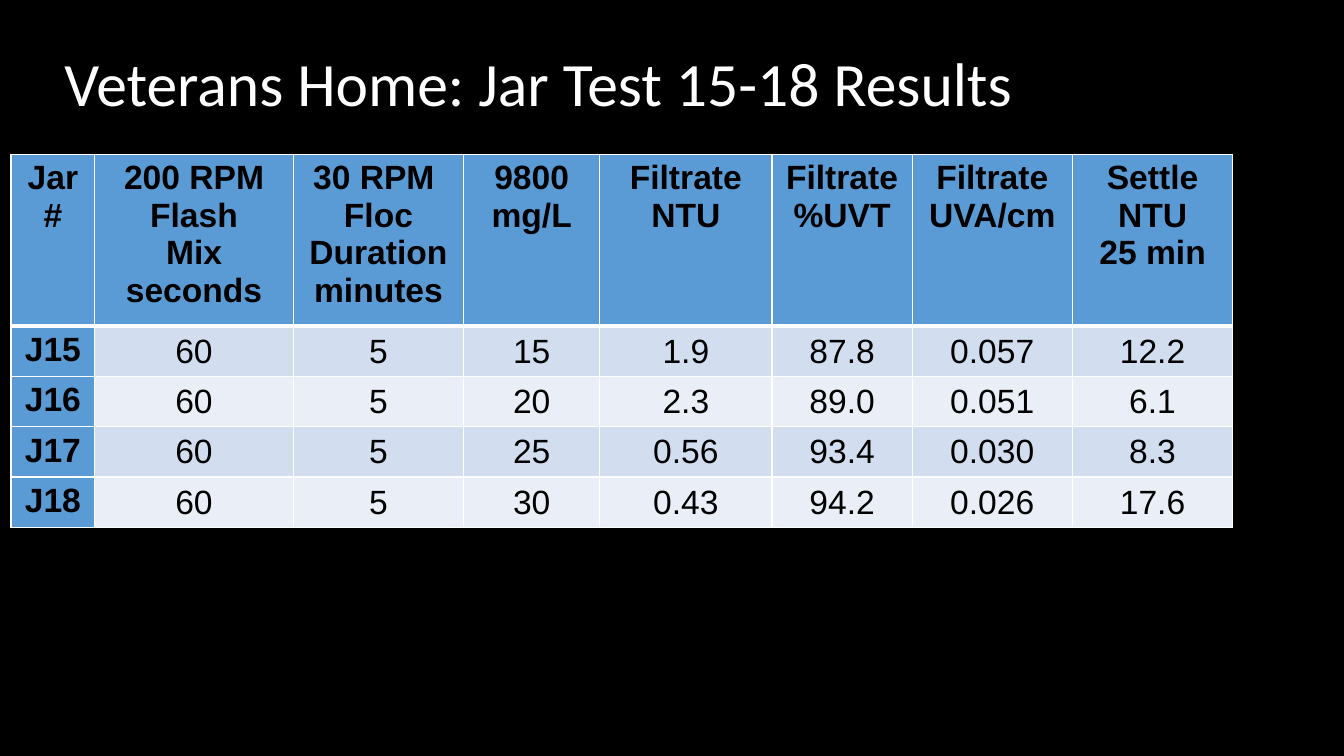
import pptx
import pptx.dml.color
import pptx.enum.text
import pptx.oxml
import pptx.oxml.ns
import pptx.util

Pt = pptx.util.Pt
RGBColor = pptx.dml.color.RGBColor
ANCHOR = pptx.enum.text.MSO_ANCHOR
ALIGN = pptx.enum.text.PP_ALIGN

BLACK = RGBColor(0x00, 0x00, 0x00)
WHITE = RGBColor(0xFF, 0xFF, 0xFF)
HEADER_BLUE = RGBColor(0x5B, 0x9B, 0xD5)
BAND_DARK = RGBColor(0xD2, 0xDE, 0xEF)
BAND_LIGHT = RGBColor(0xEA, 0xEF, 0xF7)

HEADERS = ["Jar\n#", "200 RPM\nFlash\nMix\nseconds", "30 RPM \nFloc\nDuration\nminutes",
           "9800\nmg/L", "Filtrate\nNTU", "Filtrate\n%UVT", "Filtrate\nUVA/cm",
           "Settle\nNTU\n25 min"]
RESULTS = [
    ["J15", "60", "5", "15", "1.9", "87.8", "0.057", "12.2"],
    ["J16", "60", "5", "20", "2.3", "89.0", "0.051", "6.1"],
    ["J17", "60", "5", "25", "0.56", "93.4", "0.030", "8.3"],
    ["J18", "60", "5", "30", "0.43", "94.2", "0.026", "17.6"],
]
COL_WIDTHS = [59.8, 141.8, 121.7, 97.2, 123.1, 100.1, 114.5, 114.5]
ROW_HEIGHTS = [39.6] + [29.5] * len(RESULTS)


class SlideBuilder:
    title_font = {"name": "Calibri", "size": Pt(44), "bold": False}
    cell_font = {"name": "Arial", "size": Pt(24)}
    value_format = {"vertical_anchor": ANCHOR.MIDDLE, "margin_left": Pt(0.72),
                    "margin_right": Pt(0.72), "margin_top": Pt(0.72), "margin_bottom": Pt(0)}

    def __init__(self, prs):
        self.s = prs.slides.add_slide(prs.slide_layouts[6])

    def background(self, color):
        fill = self.s.background.fill
        fill.solid()
        fill.fore_color.rgb = color

    def apply(self, target, values):
        for name, value in values.items():
            setattr(target, name, value)

    def add_text(self, tf, text, font, color, para):
        for i, line in enumerate(text.split("\n")):
            p = tf.add_paragraph() if i else tf.paragraphs[0]
            self.apply(p, para)
            r = p.add_run()
            r.text = line
            self.apply(r.font, font)
            r.font.color.rgb = color

    def title(self, text, x, y, w, h):
        tf = self.s.shapes.add_textbox(Pt(x), Pt(y), Pt(w), Pt(h)).text_frame
        self.apply(tf, {"word_wrap": True, "vertical_anchor": ANCHOR.MIDDLE})
        self.add_text(tf, text, self.title_font, WHITE, {"line_spacing": 0.9})

    def borders(self, cell, widths):
        tc_pr = cell._tc.get_or_add_tcPr()
        for side, width in widths.items():
            tc_pr.append(pptx.oxml.parse_xml(
                f'<a:ln{side} {pptx.oxml.ns.nsdecls("a")} w="{Pt(width)}">'
                f'<a:solidFill><a:srgbClr val="{WHITE}"/></a:solidFill></a:ln{side}>'))

    def cell(self, cell, text, row, col):
        is_label = row == 0 or col == 0
        # Thick rule between the header and the first result row
        self.borders(cell, {"L": 1, "R": 1, "T": 3 if row == 1 else 1,
                            "B": 3 if row == 0 else 1})
        cell.fill.solid()
        band = BAND_DARK if row % 2 else BAND_LIGHT
        cell.fill.fore_color.rgb = HEADER_BLUE if is_label else band
        if not is_label:
            self.apply(cell, self.value_format)
        font = {**self.cell_font, "bold": is_label}
        self.add_text(cell.text_frame, text, font, BLACK, {"alignment": ALIGN.CENTER})

    def table(self, rows, x, y, widths, heights):
        table = self.s.shapes.add_table(len(rows), len(widths), Pt(x), Pt(y),
                                        Pt(sum(widths)), Pt(sum(heights))).table
        for column, width in zip(table.columns, widths):
            column.width = Pt(width)
        for table_row, height in zip(table.rows, heights):
            table_row.height = Pt(height)
        for i, row in enumerate(rows):
            for j, text in enumerate(row):
                self.cell(table.cell(i, j), text, i, j)


def main():
    prs = pptx.Presentation()
    prs.slide_width, prs.slide_height = Pt(960), Pt(540)
    slide = SlideBuilder(prs)
    slide.background(BLACK)

    # Title
    slide.title("Veterans Home: Jar Test 15-18 Results", 38.9, 9.4, 855.4, 104.4)

    # Jar test results
    slide.table([HEADERS] + RESULTS, 7.9, 110.2, COL_WIDTHS, ROW_HEIGHTS)

    prs.save("out.pptx")


if __name__ == "__main__":
    main()
